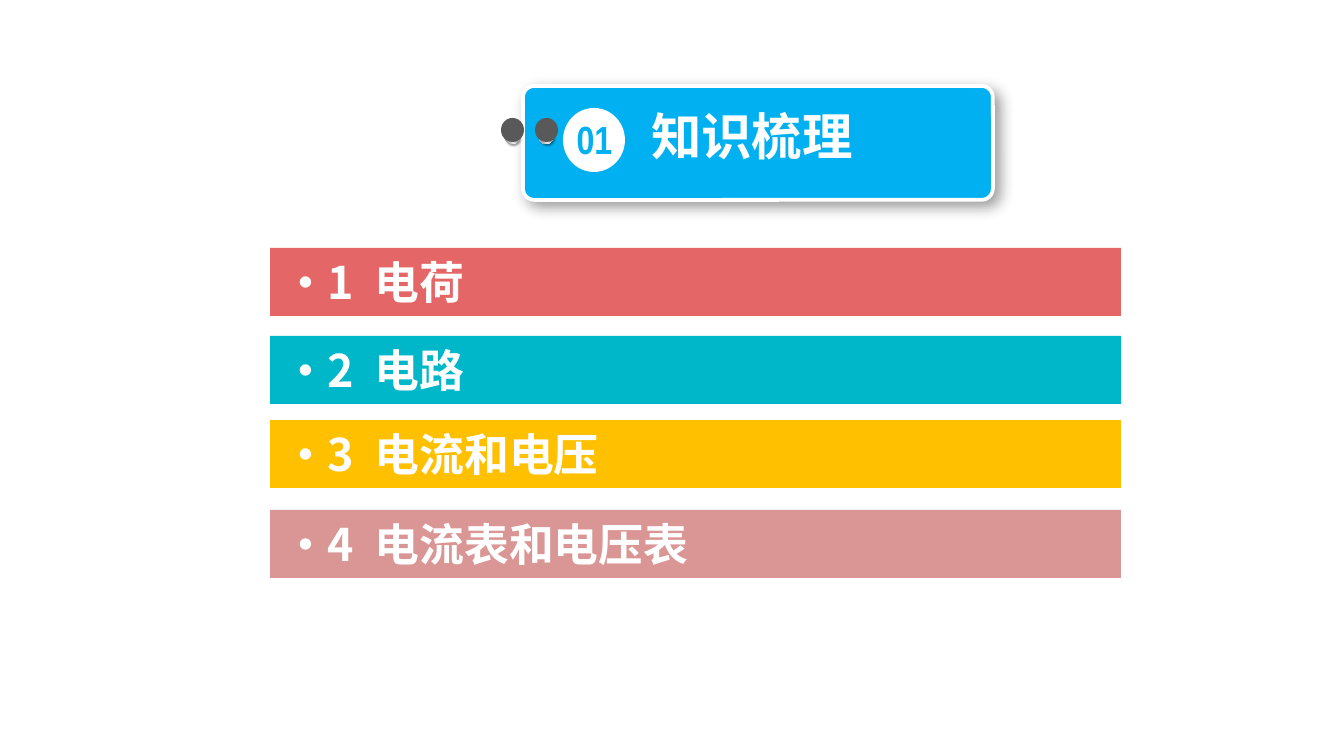
from lxml import etree
from pptx import Presentation
from pptx.dml.color import RGBColor
from pptx.enum.shapes import MSO_SHAPE as Shape
from pptx.enum.text import MSO_ANCHOR as Anchor, PP_ALIGN as Align
from pptx.oxml import parse_xml
from pptx.oxml.ns import nsdecls, qn
from pptx.util import Emu, Pt

PX_PER_INCH = 134.4
WHITE = RGBColor(0xFF, 0xFF, 0xFF)
BLUE = RGBColor(0x00, 0xB0, 0xF0)
DARK_GREY = RGBColor(0x59, 0x59, 0x59)
RED = RGBColor(0xE5, 0x66, 0x66)
TEAL = RGBColor(0x00, 0xB7, 0xCA)
AMBER = RGBColor(0xFF, 0xC0, 0x00)
ROSE = RGBColor(0xD9, 0x96, 0x94)
SILVER = RGBColor(0xA6, 0xA6, 0xA6)
PALE_GREY = RGBColor(0xF2, 0xF2, 0xF2)
METAL_STOPS = [(0, WHITE), (17, SILVER), (35, PALE_GREY),
               (55, SILVER), (75, PALE_GREY), (100, SILVER)]
CHINESE_FONT = "Noto Sans CJK SC"
NUMBER_FONT = "Arial Narrow"

# Number, title, colour and top of each bar, in px below the first bar
TOPICS = [("1", "电荷", RED, 0), ("2", "电路", TEAL, 88),
          ("3", "电流和电压", AMBER, 172), ("4", "电流表和电压表", ROSE, 262)]


def px(length):
    return Emu(round(length * 914400 / PX_PER_INCH))


def add_block(slide, kind, left, top, width, height, fill=None):
    block = slide.shapes.add_shape(kind, px(left), px(top), px(width), px(height))
    block.shadow.inherit = False
    block.line.fill.background()
    if fill is not None:
        block.fill.solid()
        block.fill.fore_color.rgb = fill
    return block


def add_shadow(block, blur, distance):
    effects = block._element.spPr.find(qn("a:effectLst"))
    effects.append(parse_xml(
        f'<a:outerShdw {nsdecls("a")} blurRad="{Pt(blur)}" dist="{Pt(distance)}" '
        'dir="2700000" algn="tl" rotWithShape="0"><a:srgbClr val="000000">'
        '<a:alpha val="40000"/></a:srgbClr></a:outerShdw>'))


def fill_metal(block):
    block.fill.gradient()
    gradient = block._element.spPr.find(qn("a:gradFill"))
    stops = gradient.find(qn("a:gsLst"))
    for stop in list(stops):
        stops.remove(stop)
    for percent, color in METAL_STOPS:
        stop = etree.SubElement(stops, qn("a:gs"), pos=str(percent * 1000))
        etree.SubElement(stop, qn("a:srgbClr"), val=str(color))
    block.fill.gradient_angle = 315  # counter-clockwise, so 45 clockwise


def set_up_text(box, align, side_inset=0):
    frame = box.text_frame
    frame.word_wrap = True
    frame.vertical_anchor = Anchor.MIDDLE
    frame.margin_left = frame.margin_right = px(side_inset)
    frame.margin_top = frame.margin_bottom = 0
    para = frame.paragraphs[0]
    para.alignment = align
    return para


def add_span(para, text, size, color, font_name, spacing=0):
    span = para.add_run()
    span.text = text
    font = span.font
    font.size, font.bold, font.name = Pt(size), True, font_name
    font.color.rgb = color
    props = span._r.get_or_add_rPr()
    etree.SubElement(props, qn("a:ea"), typeface=font_name)
    props.set("lang", "zh-CN")
    if spacing:
        props.set("spc", str(round(spacing * 100)))


def add_label(slide, left, top, width, height, text, size, color, font_name):
    box = slide.shapes.add_textbox(px(left), px(top), px(width), px(height))
    add_span(set_up_text(box, Align.CENTER), text, size, color, font_name)


def add_heading(slide, left, top, width, height):
    # Card
    card = add_block(slide, Shape.ROUNDED_RECTANGLE, left, top, width, height, BLUE)
    card.adjustments[0] = 0.1
    card.line.color.rgb = WHITE
    card.line.width = Pt(2)
    add_shadow(card, 8, 4)

    # Binding holes, each with a metal bead behind
    for hole_left in (left + 12, left - 22):
        bead = add_block(slide, Shape.OVAL, hole_left + 4, top + 44, 14, 14)
        bead.rotation = 270
        fill_metal(bead)
        add_shadow(bead, 1, 1)
        add_block(slide, Shape.OVAL, hole_left, top + 32, 23, 24, DARK_GREY)

    # Number and title
    add_block(slide, Shape.OVAL, left + 40, top + 22, 62, 64, WHITE)
    add_label(slide, left + 36, top + 23, 71, 60, "01", 21, BLUE, NUMBER_FONT)
    add_label(slide, left + 80, top + 12, 298, 75, "知识梳理", 27, WHITE, CHINESE_FONT)


def add_topics(slide, left, top, width, bar_height):
    for number, title, color, offset in TOPICS:
        bar = add_block(slide, Shape.RECTANGLE, left, top + offset, width, bar_height, color)
        para = set_up_text(bar, Align.LEFT, side_inset=13)
        add_span(para, "·" + number, 24, WHITE, CHINESE_FONT)
        add_span(para, " ", 24, WHITE, CHINESE_FONT, spacing=5.5)
        add_span(para, title, 24, WHITE, CHINESE_FONT)


def main():
    deck = Presentation()
    deck.slide_width, deck.slide_height = px(1344), px(756)
    slide = deck.slides.add_slide(deck.slide_layouts[6])
    add_heading(slide, 523, 86, 470, 114)
    add_topics(slide, 270, 248, 851, 68)
    deck.save("out.pptx")


if __name__ == "__main__":
    main()
